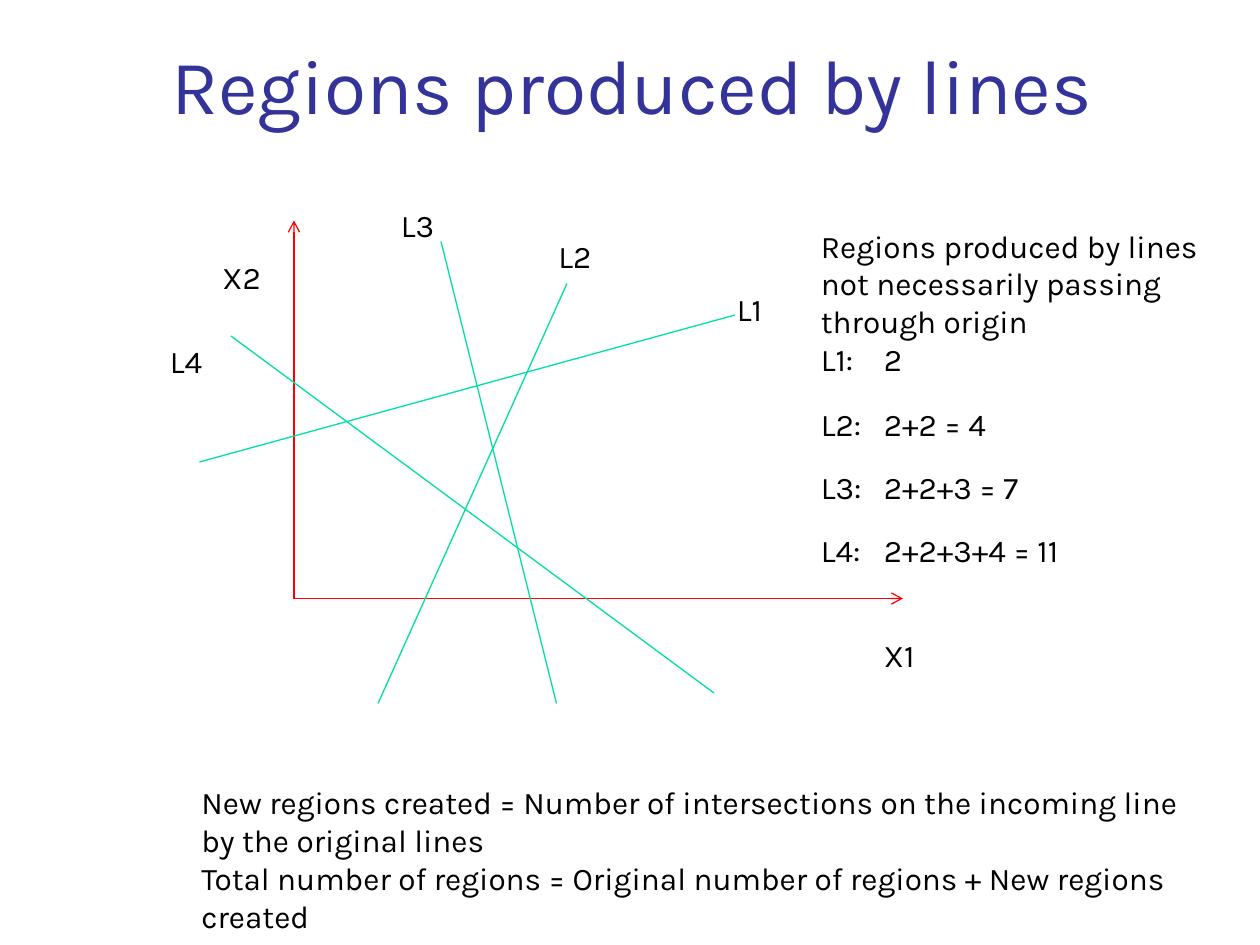
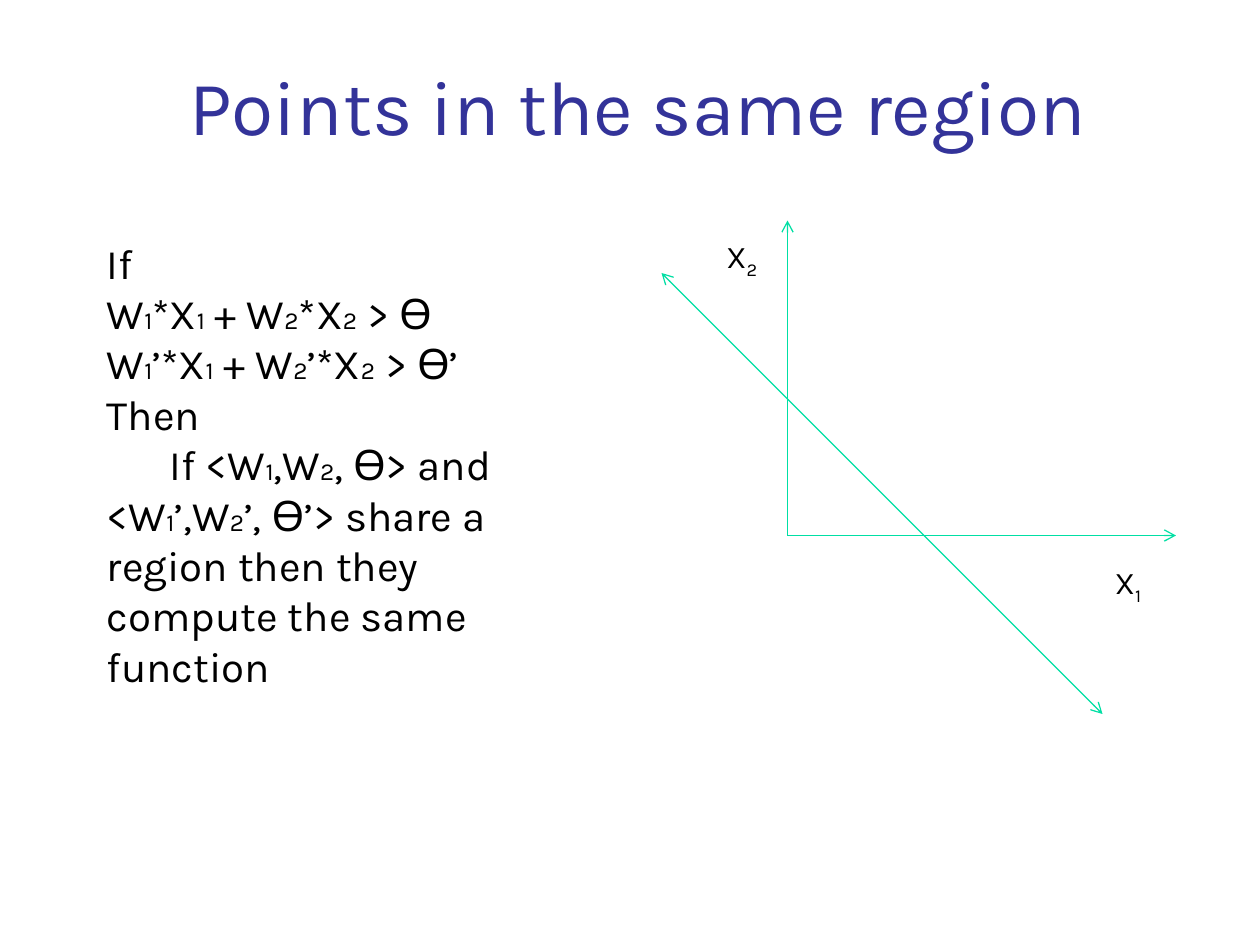
from pptx import Presentation as Deck
from pptx.dml.color import RGBColor as Rgb
from pptx.enum.shapes import MSO_CONNECTOR as Conn
from pptx.enum.text import MSO_ANCHOR as Anchor, MSO_AUTO_SIZE as Fit
from pptx.oxml.ns import qn
from pptx.util import Pt
from lxml.etree import SubElement as Sub

HUES = {"title": "333399", "text": "000000", "axis": "FF0000", "line": "00DFA4"}
FONT = "Karla"


def write(par, text, size=18, hue="text", small=None):
    """Add text to a paragraph; the character after each "_" is an index,
    set in the small size if given, else lowered."""
    def run(part, index=False):
        if not part:
            return
        bit = par.add_run()
        bit.text = part
        bit.font.name = FONT
        bit.font.size = Pt(small if index and small else size)
        bit.font.color.rgb = Rgb.from_string(HUES[hue])
        if index and not small:
            bit.font._element.set("baseline", "-25000")

    first, *rest = text.split("_")
    run(first)
    for part in rest:
        run(part[0], index=True)
        run(part[1:])


class Page:
    def __init__(self, deck):
        self.deck = deck
        self.slide = None

    def start(self, title, height):
        self.slide = self.deck.slides.add_slide(self.deck.slide_layouts[6])
        self.text([title], 90.7, 16.6, 613.4, height, size=44, hue="title",
                  anchor=Anchor.BOTTOM, fit=Fit.NONE)

    def text(self, lines, x, y, wide, high=29, anchor=Anchor.TOP,
             fit=Fit.SHAPE_TO_FIT_TEXT, **style):
        box = self.slide.shapes.add_textbox(Pt(x), Pt(y), Pt(wide), Pt(high))
        frame = box.text_frame
        frame.word_wrap = True
        frame.auto_size = fit
        frame.vertical_anchor = anchor
        for i, line in enumerate(lines):
            par = frame.add_paragraph() if i else frame.paragraphs[0]
            write(par, line, **style)

    def label(self, name, x, y):
        self.text([name], x, y, 42)

    def line(self, start, end, hue="line", tips=()):
        ends = [Pt(v) for v in (*start, *end)]
        link = self.slide.shapes.add_connector(Conn.STRAIGHT, *ends)
        link.line.color.rgb = Rgb.from_string(HUES[hue])
        link.line.width = Pt(0.75)
        for tip in tips:
            Sub(link.line._get_or_add_ln(), qn(f"a:{tip}End"), type="arrow")
        Sub(link._element.spPr, qn("a:effectLst"))

    def axes(self, x, y, right, top, hue):
        for end in ((x, top), (right, y)):
            self.line((x, y), end, hue, tips=("tail",))


def regions(page):
    page.start("Regions produced by lines", 61.2)

    # Plane with four lines: start, end, label place
    page.axes(168, 342, 516, 126, "axis")
    page.label("X1", 498, 360)
    page.label("X2", 120, 144)
    cuts = {
        "L1": ((114, 264), (420, 180), (414, 162)),
        "L2": ((324, 162), (216, 402), (312, 132)),
        "L3": ((252, 138), (318, 402), (222, 114)),
        "L4": ((132, 192), (408, 396), (90, 192)),
    }
    for name, (start, end, spot) in cuts.items():
        page.line(start, end)
        page.label(name, *spot)

    # Count of regions after each line
    page.text(["Regions produced by lines not necessarily passing through origin",
               "L1: \t2"], 462, 126, 240, 94)
    sums = ["L2:\t2+2 = 4", "L3:\t2+2+3 = 7", "L4:\t2+2+3+4 = 11"]
    for i, total in enumerate(sums):
        page.text([total], 462, 228 + 36 * i, 198)

    # Rule
    page.text(["New regions created = Number of intersections on the incoming "
               "line by the original lines",
               "Total number of regions = Original number of regions + New "
               "regions created"], 108, 444, 582, 73)


def points(page):
    page.start(" Points in the same region", 73.4)

    # Plane with one boundary
    page.axes(450, 306, 672, 126, "line")
    page.line((378, 156), (630, 408), tips=("head", "tail"))
    page.label("X_1", 630, 318)
    page.label("X_2", 408, 132)

    # Claim
    page.text(["If",
               "W_1*X_1 + W_2*X_2 > Ѳ",
               "W_1’*X_1 + W_2’*X_2 > Ѳ’",
               "Then",
               "\tIf <W_1,W_2, Ѳ> and \t<W_1’,W_2’, Ѳ’> share a \tregion "
               "then they \tcompute the same \tfunction"],
              54, 132, 318, 269, size=24, small=14)


def main():
    deck = Deck()
    deck.slide_width, deck.slide_height = Pt(720), Pt(540)
    page = Page(deck)
    regions(page)
    points(page)
    deck.save("out.pptx")


if __name__ == "__main__":
    main()
